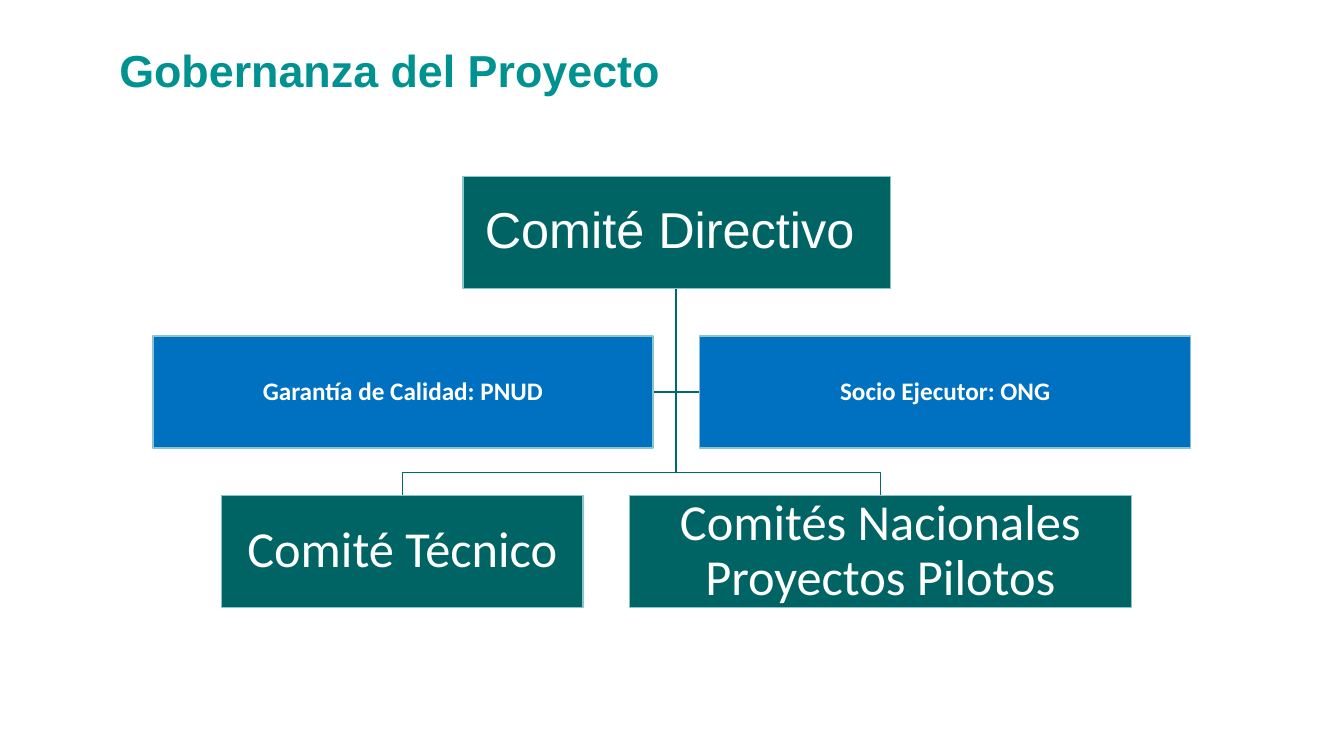
from pptx import Presentation
from pptx.dml.color import RGBColor
from pptx.enum.shapes import MSO_SHAPE as Preset
from pptx.enum.text import MSO_ANCHOR as Anchor, MSO_AUTO_SIZE as AutoSize, PP_ALIGN as Align
from pptx.util import Inches, Pt

COLORS = {"title": "009191", "committee": "006465", "partner": "0070C0",
          "border": "89C5CA", "link": "006B6B", "text": "FFFFFF"}
COLUMNS, ROWS = 160, 90
BOX_HEIGHT, LEVEL_STEP, FIRST_TOP, GAP = 13.35, 19, 21, 5.55
TRUNK = 80.5
LEVELS = [
    (55.1, [("Comité Directivo ", 50.9, "committee", "Arial")]),
    (18.2, [("Garantía de Calidad: PNUD", 59.55, "partner", "Calibri"),
            ("Socio Ejecutor: ONG", 58.45, "partner", "Calibri")]),
    (26.4, [("Comité Técnico", 43, "committee", "Calibri"),
            ("Comités Nacionales Proyectos Pilotos", 59.75, "committee", "Calibri")]),
]
FORMATS = {
    "title": {"size": Pt(32), "bold": True},
    "committee": {"size": Pt(36), "bold": False},
    "partner": {"size": Pt(18), "bold": True},
}
INSETS = {"committee": 0.03, "partner": 0.01}


class OrganizationSlide:
    """Draws styled elements on one slide, measured in grid columns and rows."""

    def __init__(self, presentation):
        self.slide = presentation.slides.add_slide(presentation.slide_layouts[5])
        self.column = presentation.slide_width / COLUMNS
        self.row = presentation.slide_height / ROWS

    def point(self, x, y):
        return round(x * self.column), round(y * self.row)

    def label(self, shape, text, kind, font_name, color, align):
        frame = shape.text_frame
        frame.text = text
        frame.word_wrap = True
        frame.auto_size = AutoSize.NONE
        frame.vertical_anchor = Anchor.MIDDLE
        paragraph = frame.paragraphs[0]
        paragraph.alignment = align
        paragraph.line_spacing = 0.9
        font = paragraph.runs[0].font
        for name, value in {**FORMATS[kind], "name": font_name}.items():
            setattr(font, name, value)
        font.color.rgb = RGBColor.from_string(COLORS[color])

    def outline(self, shape, color):
        shape.shadow.inherit = False
        shape.line.color.rgb = RGBColor.from_string(COLORS[color])
        shape.line.width = Pt(1)

    def title(self, text, left, top, width, height):
        shape = self.slide.shapes.title
        shape.left, shape.top = self.point(left, top)
        shape.width, shape.height = self.point(width, height)
        self.label(shape, text, "title", "Arial", "title", Align.LEFT)

    def box(self, text, left, top, width, kind, font_name):
        shape = self.slide.shapes.add_shape(
            Preset.RECTANGLE, *self.point(left, top), *self.point(width, BOX_HEIGHT))
        shape.fill.solid()
        shape.fill.fore_color.rgb = RGBColor.from_string(COLORS[kind])
        self.outline(shape, "border")
        for side in ("left", "top", "right", "bottom"):
            setattr(shape.text_frame, f"margin_{side}", Inches(INSETS[kind]))
        self.label(shape, text, kind, font_name, "text", Align.CENTER)

    def link(self, *corners):
        start, *others = [self.point(x, y) for x, y in corners]
        builder = self.slide.shapes.build_freeform(*start)
        builder.add_line_segments(others, close=False)
        shape = builder.convert_to_shape()
        shape.fill.background()
        self.outline(shape, "link")


def main():
    presentation = Presentation()
    presentation.slide_width, presentation.slide_height = Inches(13.33), Inches(7.5)
    chart = OrganizationSlide(presentation)
    chart.title("Gobernanza del Proyecto", 13, 3.7, 67.1, 10)

    boxes = []
    for level, (left, members) in enumerate(LEVELS):
        for text, width, kind, font_name in members:
            boxes.append((text, left, FIRST_TOP + level * LEVEL_STEP, width, kind, font_name))
            left += width + GAP

    start = (TRUNK, FIRST_TOP + BOX_HEIGHT)
    for text, left, top, width, kind, font_name in boxes[1:]:
        if kind == "partner":
            middle = top + BOX_HEIGHT / 2
            edge = left if left > TRUNK else left + width
            chart.link(start, (TRUNK, middle), (edge, middle))
        else:
            center, fork = left + width / 2, top - GAP / 2
            chart.link(start, (TRUNK, fork), (center, fork), (center, top))

    for box in boxes:
        chart.box(*box)
    presentation.save("out.pptx")


if __name__ == "__main__":
    main()
